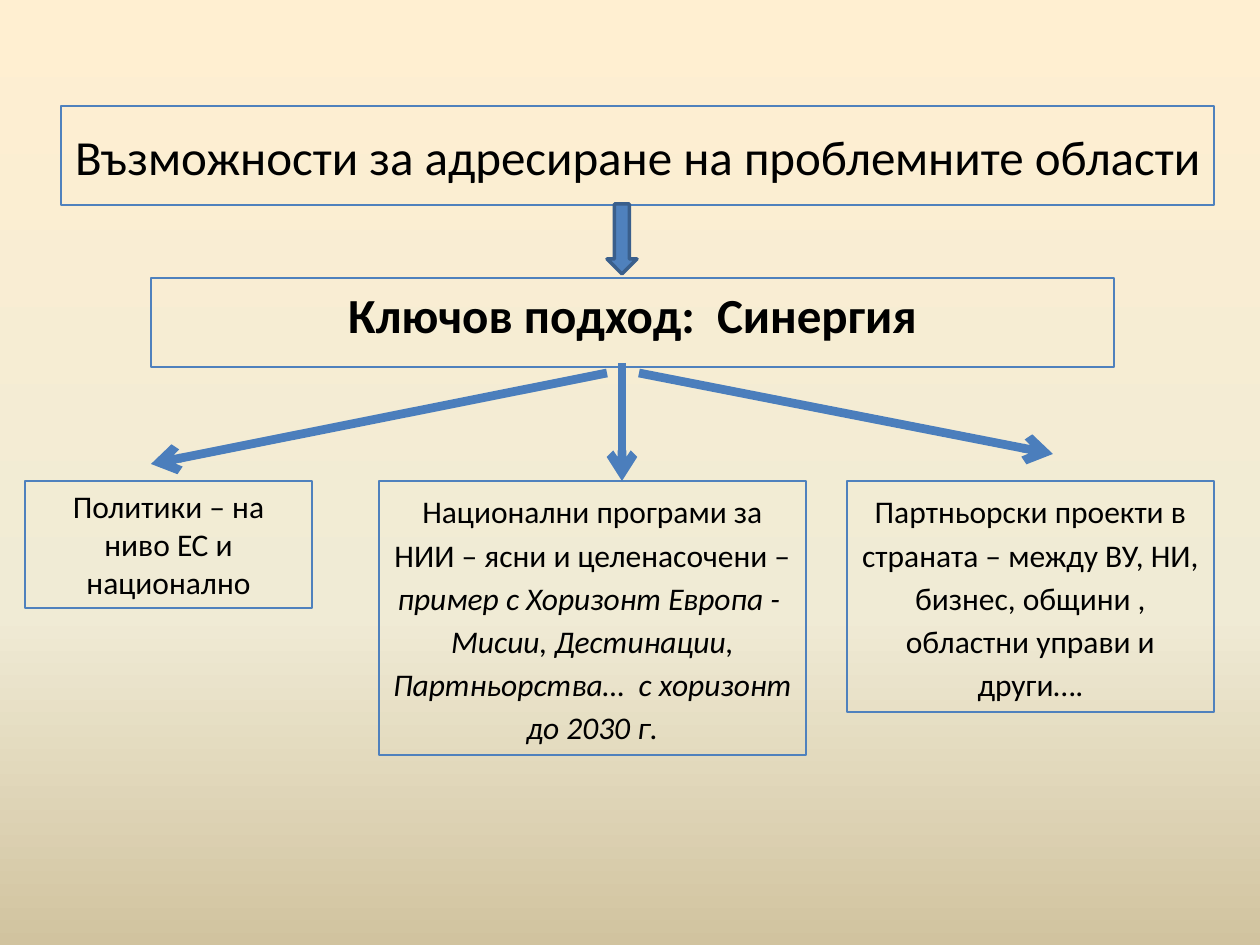
from copy import deepcopy

from lxml import etree
from pptx import Presentation, util as u
from pptx.dml.color import RGBColor
from pptx.enum import shapes, text
from pptx.oxml.ns import qn

PX = u.Inches(1) // 126
FONT, BLACK = "Calibri", "000000"
BLUE, DARK_BLUE, ARROW_BLUE = "4F81BD", "3A5F8C", "4B7EBC"
BACKGROUND = [(0, "FFEFD1"), (0.65, "F0EBD5"), (1, "D1C39F")]

TOP, MIDDLE = text.MSO_ANCHOR.TOP, text.MSO_ANCHOR.MIDDLE
COLUMN_TOP = 481

# (left, top, width, height), anchor, line spacing, size, [(words, bold, italic)]
BOXES = [
    ((151, 278, 963, 89), TOP, 1, 28, [("Ключов подход:  Синергия", True, False)]),
    ((379, COLUMN_TOP, 427, 274), TOP, 1.14, 18, [
        ("Национални програми за НИИ – ясни и целенасочени – ", False, False),
        ("пример с Хоризонт Европа -  Мисии, Дестинации, Партньорства…  с хоризонт до 2030 г.",
         False, True)]),
    ((25, COLUMN_TOP, 287, 127), TOP, 1, 18, [("Политики – на ниво ЕС и национално", False, False)]),
    ((847, COLUMN_TOP, 367, 231), TOP, 1.14, 18, [
        ("Партньорски проекти в страната – между ВУ, НИ, бизнес, общини , "
         "областни управи и други….", False, False)]),
    ((61, 106, 1153, 99), MIDDLE, 1, 28,
     [("Възможности за адресиране на проблемните области", False, False)]),
]
BLOCK_ARROW = (607, 204, 30, 70)
ARROWS = [(639, 373, 1053, 454), (607, 373, 151, 464), (622, 363, 622, COLUMN_TOP)]


def color(hex_string):
    return RGBColor.from_string(hex_string)


def scaled(lengths):
    return [length * PX for length in lengths]


def set_background(slide):
    fill = slide.background.fill
    fill.gradient()
    fill.gradient_angle = 270
    last_stop = list(slide.element.iter(qn("a:gs")))[-1]
    last_stop.addnext(deepcopy(last_stop))
    for stop, (position, hex_string) in zip(fill.gradient_stops, BACKGROUND):
        stop.position = position
        stop.color.rgb = color(hex_string)


def add_outlined(slide, kind, place, line_color, line_width):
    shape = slide.shapes.add_shape(kind, *scaled(place))
    shape.shadow.inherit = False
    shape.line.color.rgb = color(line_color)
    shape.line.width = u.Pt(line_width)
    return shape


def add_box(slide, place, anchor, spacing, size, runs):
    shape = add_outlined(slide, shapes.MSO_SHAPE.RECTANGLE, place, BLUE, 0.75)
    shape.fill.background()
    frame = shape.text_frame
    frame.word_wrap = True
    frame.vertical_anchor = anchor
    paragraph = frame.paragraphs[0]
    paragraph.alignment = text.PP_ALIGN.CENTER
    paragraph.line_spacing = spacing
    for words, bold, italic in runs:
        run = paragraph.add_run()
        run.text = words
        font = run.font
        font.name, font.size, font.bold, font.italic = FONT, u.Pt(size), bold, italic
        font.color.rgb = color(BLACK)


def add_arrow(slide, ends):
    connector = slide.shapes.add_connector(shapes.MSO_CONNECTOR.STRAIGHT, *scaled(ends))
    connector.line.color.rgb = color(ARROW_BLUE)
    connector.line.width = u.Pt(5)
    properties = connector.element.spPr
    etree.SubElement(properties.find(qn("a:ln")), qn("a:tailEnd"), type="arrow")
    etree.SubElement(properties, qn("a:effectLst"))


def main():
    presentation = Presentation()
    presentation.slide_width, presentation.slide_height = u.Inches(10), u.Inches(7.5)
    slide = presentation.slides.add_slide(presentation.slide_layouts[6])
    set_background(slide)
    for box in BOXES:
        add_box(slide, *box)
    block = add_outlined(slide, shapes.MSO_SHAPE.DOWN_ARROW, BLOCK_ARROW, DARK_BLUE, 2)
    block.fill.solid()
    block.fill.fore_color.rgb = color(BLUE)
    for ends in ARROWS:
        add_arrow(slide, ends)
    presentation.save("out.pptx")


if __name__ == "__main__":
    main()
